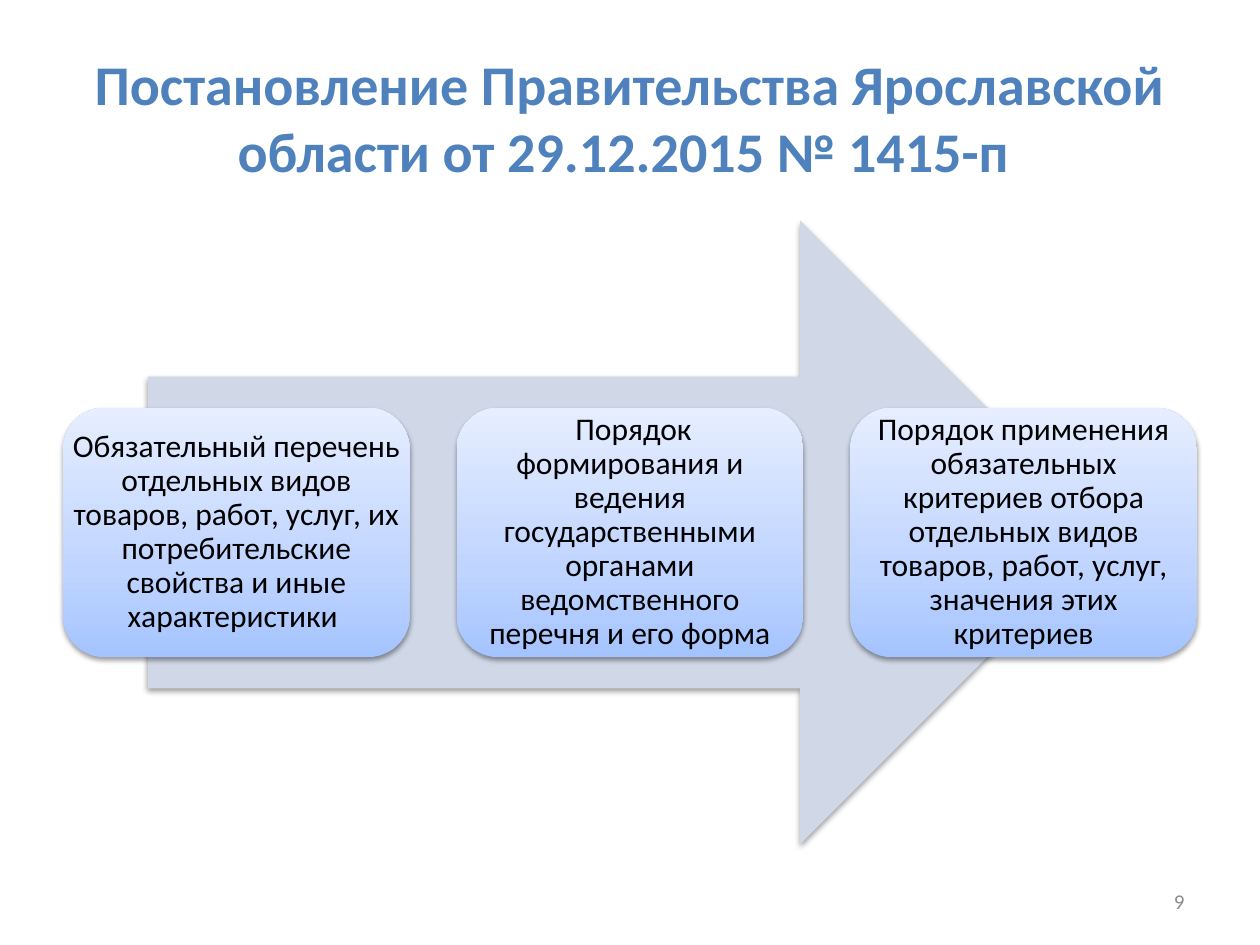
from dataclasses import dataclass

from lxml import etree
from pptx import Presentation
from pptx.dml.color import RGBColor
from pptx.enum.shapes import MSO_SHAPE
from pptx.enum.text import MSO_ANCHOR, PP_ALIGN
from pptx.oxml import parse_xml
from pptx.oxml.ns import qn
from pptx.util import Cm, Pt

RIGHT_ARROW = MSO_SHAPE.RIGHT_ARROW
ROUNDED = MSO_SHAPE.ROUNDED_RECTANGLE
MIDDLE = MSO_ANCHOR.MIDDLE
CENTER, RIGHT = PP_ALIGN.CENTER, PP_ALIGN.RIGHT
DRAWING_NS = "http://schemas.openxmlformats.org/drawingml/2006/main"


@dataclass(frozen=True)
class Theme:
    font: str = "Calibri"
    title: str = "4F81BD"
    arrow: str = "D0D8E8"
    text: str = "000000"
    number: str = "8C8C8C"
    card_stops: tuple = ((0, "A4C4FF"), (35, "BFD4FF"), (100, "E6EEFF"))
    title_size: int = 32
    card_size: int = 18
    number_size: int = 12


THEME = Theme()
TITLE = "Постановление Правительства Ярославской области от 29.12.2015 № 1415-п "
CARDS = (
    "Обязательный перечень отдельных видов товаров, работ, услуг, "
    "их потребительские свойства и иные характеристики ",
    " Порядок формирования и ведения государственными органами "
    "ведомственного перечня и его форма",
    "Порядок применения обязательных критериев отбора отдельных видов "
    "товаров, работ, услуг, значения этих критериев",
)


def add_text(page, box, text, size, color, align=CENTER, bold=False, inset=None):
    """Place one vertically centred paragraph and return it."""
    frame = page.shapes.add_textbox(*map(Cm, box)).text_frame
    frame.word_wrap = True
    frame.vertical_anchor = MIDDLE
    if inset is not None:
        frame.margin_left = frame.margin_right = Cm(inset)
        frame.margin_top = frame.margin_bottom = Cm(inset)
    para = frame.paragraphs[0]
    para.alignment = align
    span = para.add_run()
    span.text = text
    span.font.name = THEME.font
    span.font.size = Pt(size)
    span.font.bold = bold
    span.font.color.rgb = RGBColor.from_string(color)
    return para


def add_raised_shape(page, kind, box):
    """Add an outline-free shape with a soft shadow below it."""
    shape = page.shapes.add_shape(kind, *map(Cm, box))
    shape.line.fill.background()
    shape.shadow.inherit = False
    effects = shape.element.spPr.find(qn("a:effectLst"))
    effects.append(parse_xml(
        f'<a:outerShdw xmlns:a="{DRAWING_NS}" blurRad="{Pt(3.1)}" dist="{Pt(1.6)}" '
        'dir="5400000" rotWithShape="0"><a:srgbClr val="000000">'
        '<a:alpha val="38000"/></a:srgbClr></a:outerShdw>'))
    return shape


def fill_gradient(shape, stops):
    """Fill from bottom to top with (percent, colour) stops."""
    shape.fill.gradient()
    shape.fill.gradient_angle = 90
    stop_list = shape.element.spPr.find(f".//{qn('a:gsLst')}")
    for old_stop in list(stop_list):
        stop_list.remove(old_stop)
    for percent, color in stops:
        stop = etree.SubElement(stop_list, qn("a:gs"), pos=str(percent * 1000))
        etree.SubElement(stop, qn("a:srgbClr"), val=color)


def add_card(page, box, text):
    fill_gradient(add_raised_shape(page, ROUNDED, box), THEME.card_stops)
    para = add_text(page, box, text, THEME.card_size, THEME.text, inset=0.18)
    para.line_spacing = 0.9


def add_process(page, box, texts):
    """Draw a wide arrow with a row of evenly spaced cards across it."""
    left, top, width, height = box
    arrow_width = width * 0.85
    arrow_box = (left + (width - arrow_width) / 2, top, arrow_width, height)
    arrow = add_raised_shape(page, RIGHT_ARROW, arrow_box)
    arrow.fill.solid()
    arrow.fill.fore_color.rgb = RGBColor.from_string(THEME.arrow)

    card_width, card_height = 6.99, height * 0.4
    step = (width - card_width) / (len(texts) - 1)
    card_top = top + (height - card_height) / 2
    for index, text in enumerate(texts):
        add_card(page, (left + index * step, card_top, card_width, card_height), text)


def main():
    deck = Presentation()
    deck.slide_width, deck.slide_height = Cm(25.4), Cm(19.05)
    page = deck.slides.add_slide(deck.slide_layouts[6])
    add_text(page, (1.27, 0.76, 22.86, 3.18), TITLE,
             THEME.title_size, THEME.title, bold=True)
    add_process(page, (1.27, 4.45, 22.86, 12.57), CARDS)
    add_text(page, (18.2, 17.66, 5.93, 1.01), "9",
             THEME.number_size, THEME.number, align=RIGHT)
    deck.save("out.pptx")


if __name__ == "__main__":
    main()
